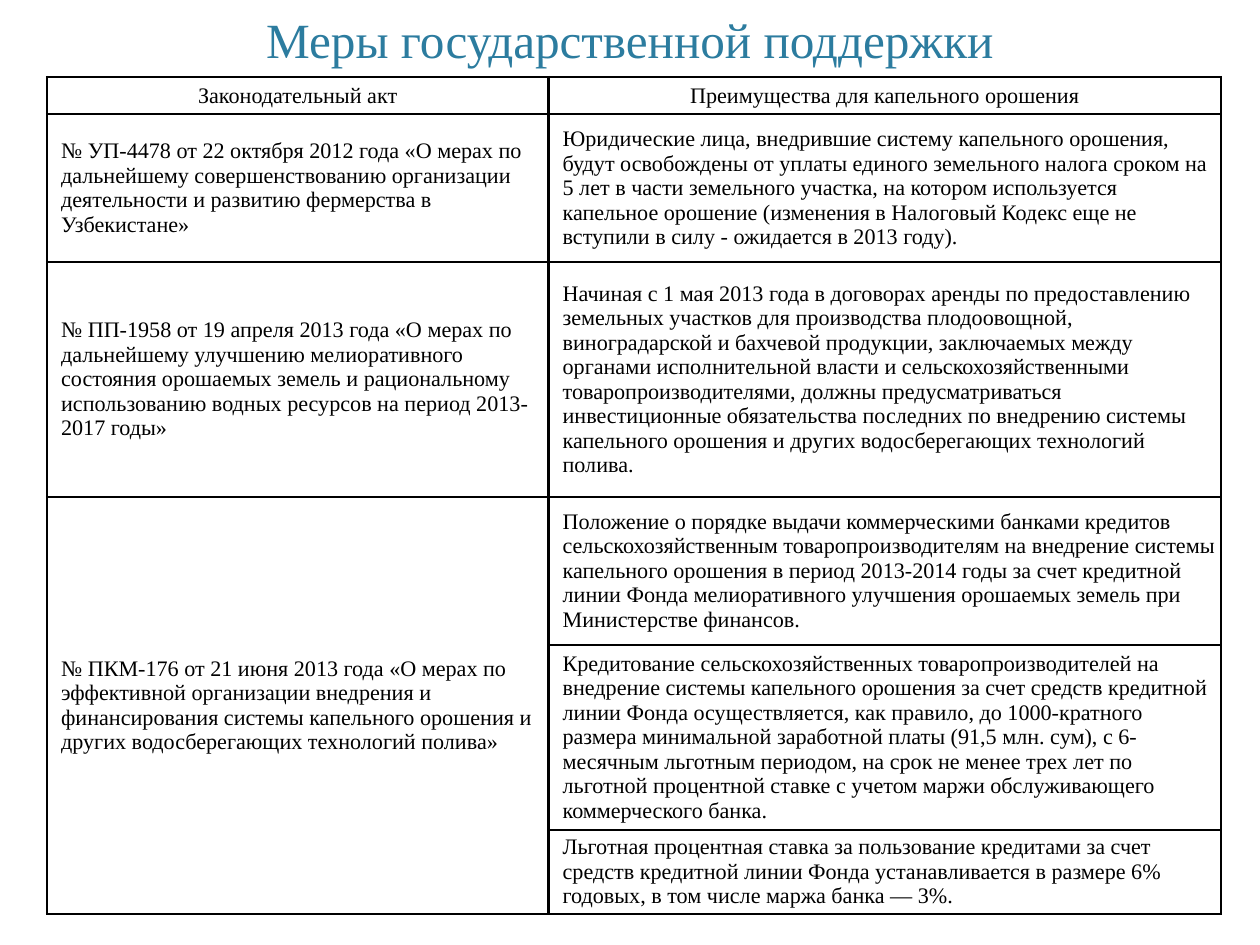
from lxml import etree
from pptx import Presentation, util as u
from pptx.dml.color import RGBColor
from pptx.enum import text
from pptx.oxml import ns

BLUE = RGBColor(0x2C, 0x7C, 0x9F)
BLACK = RGBColor(0, 0, 0)
COLS, ROWS = 142.2, 106.7
CELL = u.Inches(0.1)

TITLE = "Меры государственной поддержки"
HEADS = ["Законодательный акт", "Преимущества для капельного орошения"]
ACTS = [
    ("№ УП-4478 от 22 октября 2012 года «О мерах по дальнейшему совершенствованию "
     "организации деятельности и развитию фермерства в Узбекистане»",
     ["Юридические лица, внедрившие систему капельного орошения, будут освобождены "
      "от уплаты единого земельного налога сроком на 5 лет в части земельного участка, "
      "на котором используется капельное орошение (изменения в Налоговый Кодекс еще не "
      "вступили в силу - ожидается в 2013 году)."]),
    ("№ ПП-1958 от 19 апреля 2013 года «О мерах по дальнейшему улучшению мелиоративного "
     "состояния орошаемых земель и рациональному использованию водных ресурсов на период "
     "2013-2017 годы»",
     ["Начиная с 1 мая 2013 года в договорах аренды по предоставлению земельных участков "
      "для производства плодоовощной, виноградарской и бахчевой продукции, заключаемых "
      "между органами исполнительной власти и сельскохозяйственными "
      "товаропроизводителями, должны предусматриваться инвестиционные обязательства "
      "последних по внедрению системы капельного орошения и других водосберегающих "
      "технологий полива."]),
    ("№ ПКМ-176 от 21 июня 2013 года «О мерах по эффективной организации внедрения и "
     "финансирования системы капельного орошения и других водосберегающих технологий "
     "полива»",
     ["Положение о порядке выдачи коммерческими банками кредитов сельскохозяйственным "
      "товаропроизводителям на внедрение системы капельного орошения в период 2013-2014 "
      "годы за счет кредитной линии Фонда мелиоративного улучшения орошаемых земель при "
      "Министерстве финансов.",
      "Кредитование сельскохозяйственных товаропроизводителей на внедрение системы "
      "капельного орошения за счет средств кредитной линии Фонда осуществляется, как "
      "правило, до 1000-кратного размера минимальной заработной платы (91,5 млн. сум), "
      "с 6-месячным льготным периодом, на срок не менее трех лет по льготной процентной "
      "ставке с учетом маржи обслуживающего коммерческого банка.",
      "Льготная процентная ставка за пользование кредитами за счет средств кредитной "
      "линии Фонда устанавливается в размере 6% годовых, в том числе маржа банка — 3%."]),
]
WIDTHS = [56.6, 75.9]
HEIGHTS = [4.2, 16.7, 26.5, 16.7, 20.9, 9.4]


class Deck:
    font = "Times New Roman"

    def __init__(self):
        self.prs = Presentation()
        self.prs.slide_width = self.size(COLS)
        self.prs.slide_height = self.size(ROWS)
        self.slide = self.prs.slides.add_slide(self.prs.slide_layouts[6])

    def size(self, cells):
        return u.Emu(round(cells * CELL))

    def label(self, para, words, points, color, align):
        para.text = words
        para.alignment = align
        for run in para.runs:
            run.font.name = self.font
            run.font.size = u.Pt(points)
            run.font.color.rgb = color

    def title(self, words, *place):
        box = self.slide.shapes.add_textbox(*map(self.size, place))
        frame = box.text_frame
        frame.word_wrap = True
        frame.auto_size = text.MSO_AUTO_SIZE.NONE
        frame.vertical_anchor = text.MSO_ANCHOR.BOTTOM
        frame.margin_left = frame.margin_right = self.size(1.4)
        frame.margin_top = frame.margin_bottom = self.size(0.7)
        self.label(frame.paragraphs[0], words, 40, BLUE, text.PP_ALIGN.CENTER)

    def border(self, cell):
        props = cell._tc.get_or_add_tcPr()
        for spot, side in enumerate(("lnL", "lnR", "lnT", "lnB")):
            line = etree.Element(ns.qn("a:" + side), w=str(u.Pt(2)))
            fill = etree.SubElement(line, ns.qn("a:solidFill"))
            etree.SubElement(fill, ns.qn("a:srgbClr"), val=str(BLACK))
            props.insert(spot, line)

    def table(self, left, top, widths, heights):
        place = map(self.size, (left, top, sum(widths), sum(heights)))
        grid = self.slide.shapes.add_table(len(heights), len(widths), *place).table
        grid.horz_banding = grid.first_row = False
        for col, width in zip(grid.columns, widths):
            col.width = self.size(width)
        for row, height in zip(grid.rows, heights):
            row.height = self.size(height)
        for cell in grid.iter_cells():
            cell.fill.background()
            self.border(cell)
        return grid

    def entry(self, cell, words, head=False):
        cell.vertical_anchor = text.MSO_ANCHOR.MIDDLE
        cell.margin_left = cell.margin_right = self.size(0.6)
        cell.margin_top = cell.margin_bottom = self.size(0.6)
        align = text.PP_ALIGN.CENTER if head else text.PP_ALIGN.LEFT
        para = cell.text_frame.paragraphs[0]
        self.label(para, words, 18, BLACK, align)
        if not head:
            para._p.get_or_add_pPr().set("marL", str(self.size(1)))


def main():
    deck = Deck()
    deck.title(TITLE, 13.9, 2.8, 114.4, 5.6)
    grid = deck.table(5.3, 8.7, WIDTHS, HEIGHTS)
    for col, head in enumerate(HEADS):
        deck.entry(grid.cell(0, col), head, True)
    row = 1
    for act, gains in ACTS:
        first = grid.cell(row, 0)
        if len(gains) > 1:
            first.merge(grid.cell(row + len(gains) - 1, 0))
        deck.entry(first, act)
        for gain in gains:
            deck.entry(grid.cell(row, 1), gain)
            row += 1
    deck.prs.save("out.pptx")


if __name__ == "__main__":
    main()
